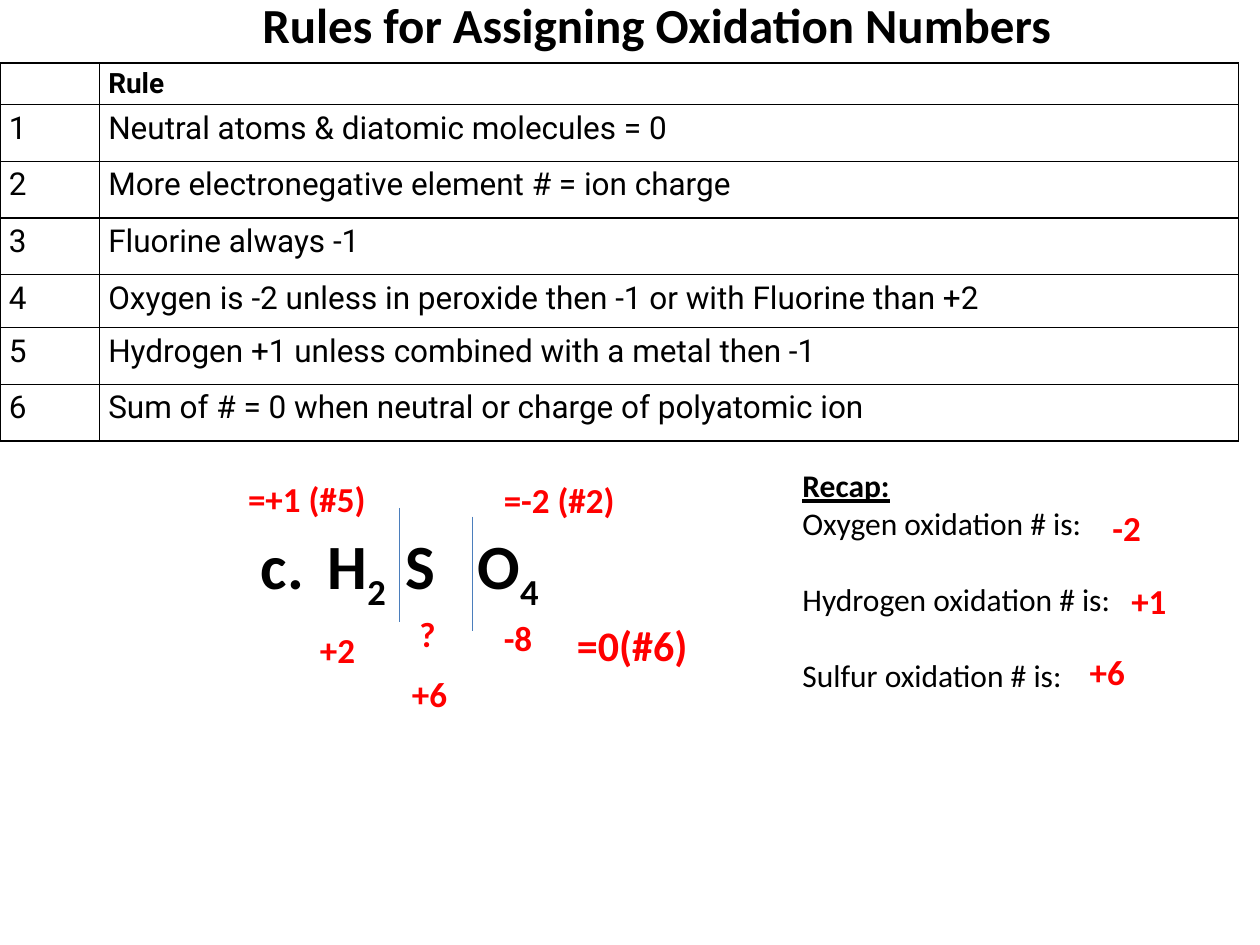
from lxml import etree
from pptx import Presentation
from pptx import util as u
from pptx.dml.color import RGBColor
from pptx.enum import shapes, text
from pptx.oxml.ns import qn

TITLE = "Rules for Assigning Oxidation Numbers"
RULES = [
    "Neutral atoms & diatomic molecules = 0",
    "More electronegative element # = ion charge",
    "Fluorine always -1",
    "Oxygen is -2 unless in peroxide then -1 or with Fluorine than +2",
    "Hydrogen +1 unless combined with a metal then -1",
    "Sum of # = 0 when neutral or charge of polyatomic ion",
]
COLUMNS = [0.79, 9.04]
ROWS = [0.33, 0.45, 0.45, 0.45, 0.42, 0.45, 0.45]
FORMULA = [("c.\tH", 0), ("2", -25), ("\tS\tO", 0), ("4", -25)]
FORMULA_TABS = [0.53, 1.15, 1.72]
DIVIDERS = [(3.17, 4.03), (3.75, 4.1)]
DIVIDER_HEIGHT = 0.91
ANSWERS = [
    ("=-2 (#2)", 3.9, 3.75, 1.09, 20),
    ("-8", 3.9, 4.84, 0.43, 20),
    ("=0(#6)", 4.48, 4.87, 1.09, 24),
    ("=+1 (#5)", 1.87, 3.74, 1.15, 20),
    ("+2", 2.44, 4.94, 0.48, 20),
    ("?", 3.23, 4.81, 0.33, 20),
    ("+6", 3.17, 5.29, 0.48, 20),
    ("-2", 8.73, 3.97, 0.43, 20),
    ("+1", 8.88, 4.55, 0.48, 20),
    ("+6", 8.55, 5.11, 0.48, 20),
]
RECAP = "Recap:"
QUESTIONS = ["Oxygen", "Hydrogen", "Sulfur"]
BLACK, RED, BLUE = "000000", "FF0000", "4B7EBC"


def color(value):
    """Turn a hex string into a colour."""
    return RGBColor.from_string(value)


def apply(target, **values):
    """Set each named attribute on the target."""
    for name, value in values.items():
        setattr(target, name, value)


def write(para, words, size, tint=BLACK, name="Calibri", **style):
    """Add one formatted span to a paragraph."""
    span = para.add_run()
    span.text = words
    apply(span.font, size=u.Pt(size), name=name, **style)
    span.font.color.rgb = color(tint)
    return span


def add_box(page, left, top, width, height, wrap=False):
    """Add a text box that grows with its text."""
    box = page.shapes.add_textbox(*map(u.Inches, (left, top, width, height)))
    apply(box.text_frame, word_wrap=wrap,
          auto_size=text.MSO_AUTO_SIZE.SHAPE_TO_FIT_TEXT)
    return box.text_frame


def add_title(page):
    """Place and fill the title placeholder."""
    title = page.shapes.title
    apply(title, left=u.Inches(0.75), top=0, width=u.Inches(8.92), height=u.Inches(0.38))
    apply(title.text_frame, margin_top=0, margin_bottom=0, word_wrap=True,
          auto_size=text.MSO_AUTO_SIZE.NONE, vertical_anchor=text.MSO_ANCHOR.MIDDLE)
    para = title.text_frame.paragraphs[0]
    para.alignment = text.PP_ALIGN.CENTER
    write(para, TITLE, 28, bold=True)


def add_borders(cell):
    """Draw a thin black line on every side of a cell."""
    props = cell._tc.get_or_add_tcPr()
    for place, side in enumerate(("lnL", "lnR", "lnT", "lnB")):
        line = etree.Element(qn(f"a:{side}"), w=str(u.Pt(1)))
        fill = etree.SubElement(line, qn("a:solidFill"))
        etree.SubElement(fill, qn("a:srgbClr"), val=BLACK)
        props.insert(place, line)


def add_rules(page):
    """Build the table of numbered rules."""
    cells = [("", "Rule")] + [(str(n), rule) for n, rule in enumerate(RULES, 1)]
    frame = page.shapes.add_table(len(ROWS), len(COLUMNS), 0, u.Inches(0.5),
                                  u.Inches(sum(COLUMNS)), u.Inches(sum(ROWS)))
    table = frame.table
    apply(table, first_row=False, horz_banding=False)
    for column, width in zip(table.columns, COLUMNS):
        column.width = u.Inches(width)
    for r, (height, words) in enumerate(zip(ROWS, cells)):
        table.rows[r].height = u.Inches(height)
        for c, value in enumerate(words):
            cell = table.cell(r, c)
            cell.fill.background()
            apply(cell, margin_left=u.Inches(0.07), margin_right=u.Inches(0.07),
                  margin_top=0, margin_bottom=0)
            add_borders(cell)
            para = cell.text_frame.paragraphs[0]
            para.line_spacing = 1.15
            if value:
                write(para, value, 18 if r else 16, name="Roboto", bold=r == 0)


def add_formula(page):
    """Write the formula on tab stops and draw its dividers."""
    frame = add_box(page, 1.87, 4.13, 3.05, 0.71, wrap=True)
    frame.margin_left = u.Inches(0.2)
    para = frame.paragraphs[0]
    stops = etree.SubElement(para._p.get_or_add_pPr(), qn("a:tabLst"))
    for stop in FORMULA_TABS:
        etree.SubElement(stops, qn("a:tab"), pos=str(u.Inches(stop)), algn="l")
    for words, shift in FORMULA:
        span = write(para, words, 36, bold=True)
        if shift:
            span.font._element.set("baseline", str(shift * 1000))
    for x, y in DIVIDERS:
        line = page.shapes.add_connector(
            shapes.MSO_CONNECTOR.STRAIGHT,
            *map(u.Inches, (x, y, x, y + DIVIDER_HEIGHT)))
        line.line.color.rgb = color(BLUE)
        line.line.width = u.Pt(0.75)
        etree.SubElement(line._element.spPr, qn("a:effectLst"))


def add_recap(page):
    """List the recap questions under their heading."""
    frame = add_box(page, 6.27, 3.65, 2.68, 1.92)
    write(frame.paragraphs[0], RECAP, 18, bold=True, underline=True)
    for n, element in enumerate(QUESTIONS):
        para = frame.add_paragraph()
        para.space_before = u.Pt(22 if n else 0)
        write(para, f"{element} oxidation # is:", 18)


def main():
    """Build and save the slide."""
    deck = Presentation()
    apply(deck, slide_width=u.Inches(10), slide_height=u.Inches(7.5))
    page = deck.slides.add_slide(deck.slide_layouts[5])
    add_title(page)
    add_rules(page)
    add_formula(page)
    add_recap(page)
    for words, left, top, width, size in ANSWERS:
        frame = add_box(page, left, top, width, size / 48 + 0.02)
        write(frame.paragraphs[0], words, size, RED, bold=True)
    deck.save("out.pptx")


if __name__ == "__main__":
    main()
